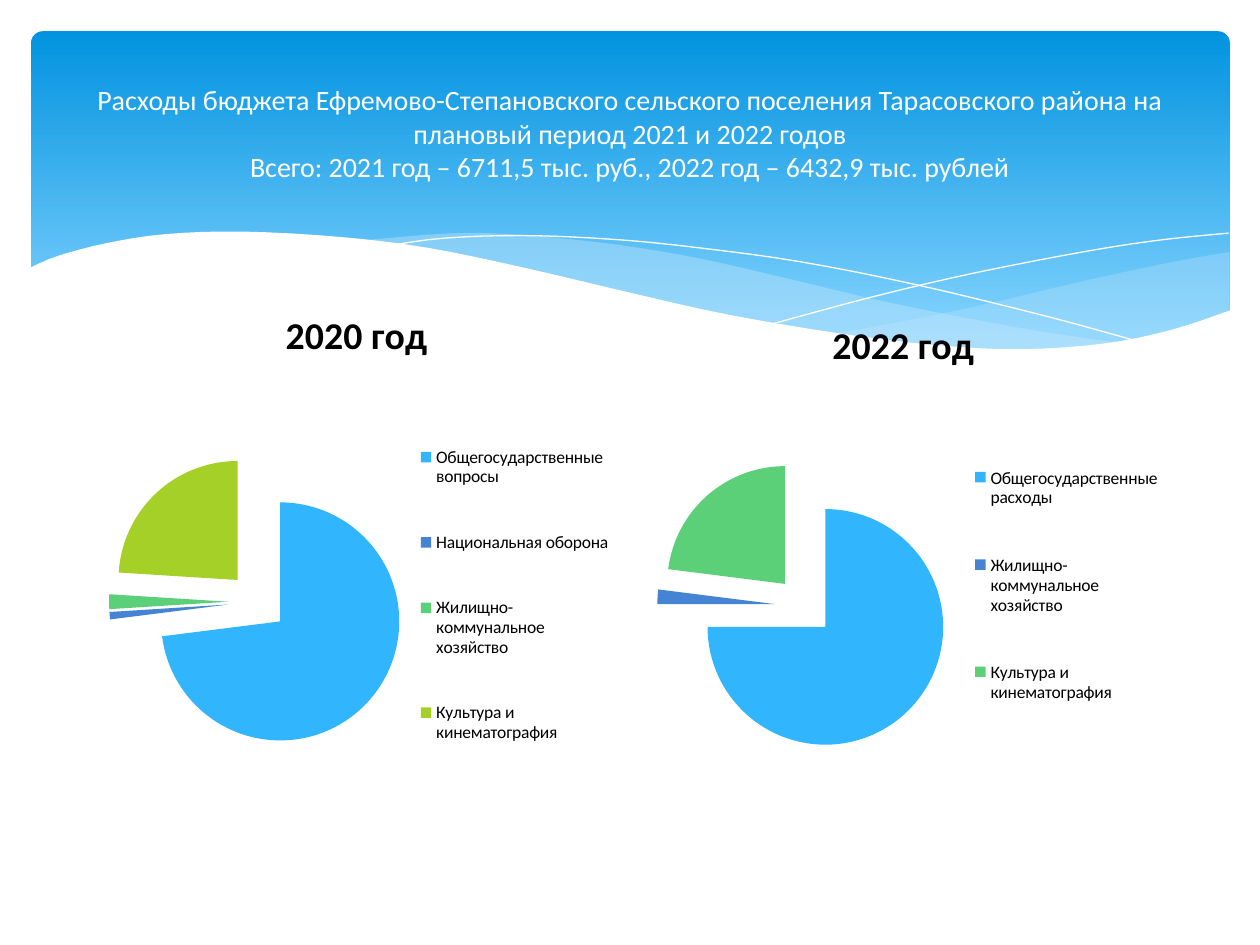
from dataclasses import dataclass
from typing import Optional

from lxml.etree import SubElement
from pptx import Presentation
from pptx.chart.data import CategoryChartData
from pptx.dml.color import RGBColor
from pptx.enum.chart import XL_CHART_TYPE as ChartType, XL_LEGEND_POSITION as LegendPosition
from pptx.enum.shapes import MSO_SHAPE as Preset
from pptx.enum.text import MSO_ANCHOR as Anchor, PP_ALIGN as Align
from pptx.oxml.ns import qn
from pptx.util import Cm, Pt

Point = tuple[float, float]
Box = tuple[float, float, float, float]


@dataclass(frozen=True)
class Theme:
    font: str = "Calibri"
    white: str = "FFFFFF"
    black: str = "000000"
    banner_top: str = "0293E0"
    banner_bottom: str = "83D3FE"
    wave: str = "C6E7FC"
    slices: tuple[str, ...] = ("31B6FD", "4584D3", "5BD078", "A5D028")
    title_size: float = 16
    chart_size: float = 18
    chart_title_size: float = 21.6
    legend_size: float = 10


@dataclass(frozen=True)
class Wave:
    """Curved edges in cm, joined end to end; without a fill it is an open line."""
    edges: tuple[tuple[Point, ...], ...]
    fill: Optional[str] = None
    opacity: int = 100


@dataclass(frozen=True)
class BudgetPie:
    title: str
    series: str
    box: Box
    legend_box: Box
    shares: dict[str, int]


THEME = Theme()
PLOT_BOX: Box = (0.03, 0.3, 0.565, 0.535)
EXPLOSION = 25

WAVES = (
    Wave((
        ((24.79, 5.08), (23.75, 5.26), (21.87, 5.66), (19.79, 6.15), (17.93, 6.53), (16.79, 6.73)),
        ((16.79, 6.73), (18.26, 6.91), (19.53, 7.04), (20.68, 7.06), (21.92, 6.99),
         (23.19, 6.78), (24.1, 6.53), (24.79, 6.27)),
    ), THEME.wave, 29),
    Wave((
        ((22.68, 6.93), (20.5, 6.6), (17.93, 6.1), (15.98, 5.64), (14.1, 5.21), (12.42, 4.93),
         (10.67, 4.75), (9.17, 4.7), (7.26, 4.85)),
        ((7.26, 4.85), (9.19, 5.16), (11.4, 5.64), (13.46, 6.1), (15.27, 6.48), (17.27, 6.81),
         (19, 7.01), (20.5, 7.06), (21.77, 7.04), (22.68, 6.93)),
    ), THEME.wave, 40),
    Wave((
        ((7.85, 4.95), (8.97, 4.8), (10.57, 4.75), (12.42, 4.83), (14.12, 5), (16.15, 5.28),
         (18.47, 5.74), (21.11, 6.38), (23.04, 6.91)),
    )),
    Wave((
        ((15.57, 6.53), (17.65, 5.97), (19.71, 5.49), (22, 5.05), (23.47, 4.83), (24.77, 4.7)),
    )),
    Wave((
        ((24.82, 6.25), (23.62, 6.65), (22.23, 6.93), (20.55, 7.04), (18.9, 6.96), (16.97, 6.73),
         (14.71, 6.35), (12.78, 5.92), (10.62, 5.41), (8.64, 5), (6.88, 4.78), (4.9, 4.67),
         (3.35, 4.72), (2.16, 4.9), (1.17, 5.16), (0.58, 5.41)),
        ((0.58, 8.36), (24.82, 8.36)),
    ), THEME.white),
)

PIES = (
    BudgetPie("2020 год", "Series 1", (1.88, 5.72, 10.62, 11.3), (0.635, 0.21, 0.36, 0.69), {
        "Общегосударственные вопросы": 73,
        "Национальная оборона": 1,
        "Жилищно-коммунальное хозяйство": 2,
        "Культура и кинематография": 24,
    }),
    BudgetPie("2022 год", "2022 год", (12.9, 5.92, 10.62, 11.1), (0.635, 0.23, 0.36, 0.6), {
        "Общегосударственные расходы": 75,
        "Жилищно-коммунальное хозяйство": 2,
        "Культура и кинематография": 23,
    }),
)

TITLE_LINES = (
    "Расходы бюджета Ефремово-Степановского сельского поселения Тарасовского района "
    "на плановый период 2021 и 2022 годов",
    "Всего: 2021 год – 6711,5 тыс. руб., 2022 год – 6432,9 тыс. рублей",
)


def rgb(color: str) -> RGBColor:
    return RGBColor.from_string(color)


def format_font(font, *, size: float, color: str, bold: bool = False) -> None:
    font.name, font.size, font.bold = THEME.font, Pt(size), bold
    font.color.rgb = rgb(color)


def write(text_frame, *lines: str, size: float, color: str, bold: bool = False) -> None:
    """Write one centred paragraph, with line breaks between the lines."""
    paragraph = text_frame.paragraphs[0]
    paragraph.alignment = Align.CENTER
    for index, line in enumerate(lines):
        if index:
            paragraph.add_line_break()
        run = paragraph.add_run()
        run.text = line
        format_font(run.font, size=size, color=color, bold=bold)


def smooth(points: tuple[Point, ...], steps: int = 4) -> list[Point]:
    """Sample a Catmull-Rom curve that passes through all points."""
    padded = (points[0], *points, points[-1])
    curve = [points[0]]
    for a, b, c, d in zip(padded, padded[1:], padded[2:], padded[3:]):
        for step in range(1, steps + 1):
            t = step / steps
            x, y = (
                (2 * q + (r - p) * t + (2 * p - 5 * q + 4 * r - s) * t ** 2
                 + (3 * q - p - 3 * r + s) * t ** 3) / 2
                for p, q, r, s in zip(a, b, c, d)
            )
            curve.append((x, y))
    return curve


def draw_banner(slide) -> None:
    banner = slide.shapes.add_shape(
        Preset.ROUNDED_RECTANGLE, Cm(0.63), Cm(0.63), Cm(24.16), Cm(6.86))
    banner.adjustments[0] = 0.034
    banner.shadow.inherit = False
    banner.line.fill.background()
    banner.fill.gradient()
    banner.fill.gradient_angle = 270
    stops = ((0, THEME.banner_top), (0.9, THEME.banner_bottom))
    for stop, (position, color) in zip(banner.fill.gradient_stops, stops):
        stop.position, stop.color.rgb = position, rgb(color)


def draw_wave(slide, wave: Wave) -> None:
    points = [(Cm(x), Cm(y)) for edge in wave.edges for x, y in smooth(edge)]
    builder = slide.shapes.build_freeform(*points[0], scale=1.0)
    builder.add_line_segments(points[1:], close=wave.fill is not None)
    shape = builder.convert_to_shape()
    shape.shadow.inherit = False
    if wave.fill is None:
        shape.fill.background()
        shape.line.color.rgb = rgb(THEME.white)
        shape.line.width = Pt(0)
        return
    shape.line.fill.background()
    shape.fill.solid()
    shape.fill.fore_color.rgb = rgb(wave.fill)
    if wave.opacity < 100:
        color = shape._element.spPr.find(".//" + qn("a:srgbClr"))
        SubElement(color, qn("a:alpha")).set("val", str(wave.opacity * 1000))


def place(element, index: int, box: Box, *, inner: bool = False) -> None:
    """Give a chart part a manual layout, in fractions of the chart."""
    for old in element.findall(qn("c:layout")):
        element.remove(old)
    layout = SubElement(element, qn("c:layout"))
    element.insert(index, layout)
    manual = SubElement(layout, qn("c:manualLayout"))
    settings = [("layoutTarget", "inner")] if inner else []
    settings += [("xMode", "edge"), ("yMode", "edge"), *zip("xywh", box)]
    for name, value in settings:
        SubElement(manual, qn(f"c:{name}")).set("val", str(value))


def draw_pie(slide, pie: BudgetPie) -> None:
    data = CategoryChartData()
    data.categories = list(pie.shares)
    data.add_series(pie.series, list(pie.shares.values()))
    chart = slide.shapes.add_chart(ChartType.PIE, *map(Cm, pie.box), data).chart
    format_font(chart.font, size=THEME.chart_size, color=THEME.black)
    chart.has_title = True
    write(chart.chart_title.text_frame, pie.title,
          size=THEME.chart_title_size, color=THEME.black, bold=True)
    chart.has_legend = True
    legend = chart.legend
    legend.position = LegendPosition.RIGHT
    legend.include_in_layout = False
    format_font(legend.font, size=THEME.legend_size, color=THEME.black)
    place(legend._element, 1, pie.legend_box)

    plot = chart.plots[0]
    plot.vary_by_categories = True
    place(plot._element.getparent(), 0, PLOT_BOX, inner=True)
    series = plot.series[0]
    explosion = SubElement(series._element, qn("c:explosion"))
    explosion.set("val", str(EXPLOSION))
    series._element.find(qn("c:tx")).addnext(explosion)
    for index, color in zip(range(len(pie.shares)), THEME.slices):
        fill = series.points[index].format.fill
        fill.solid()
        fill.fore_color.rgb = rgb(color)


def place_title(slide) -> None:
    title = slide.shapes.title
    title.left, title.top, title.width, title.height = map(Cm, (1.27, 0.94, 22.86, 3.48))
    title.text_frame.vertical_anchor = Anchor.MIDDLE
    title.text_frame.word_wrap = True
    write(title.text_frame, *TITLE_LINES, size=THEME.title_size, color=THEME.white)
    slide.shapes._spTree.append(title._element)


def main() -> None:
    presentation = Presentation()
    presentation.slide_width, presentation.slide_height = Cm(25.4), Cm(19.05)
    slide = presentation.slides.add_slide(presentation.slide_layouts[5])
    draw_banner(slide)
    for wave in WAVES:
        draw_wave(slide, wave)
    place_title(slide)
    for pie in PIES:
        draw_pie(slide, pie)
    presentation.save("out.pptx")


if __name__ == "__main__":
    main()
